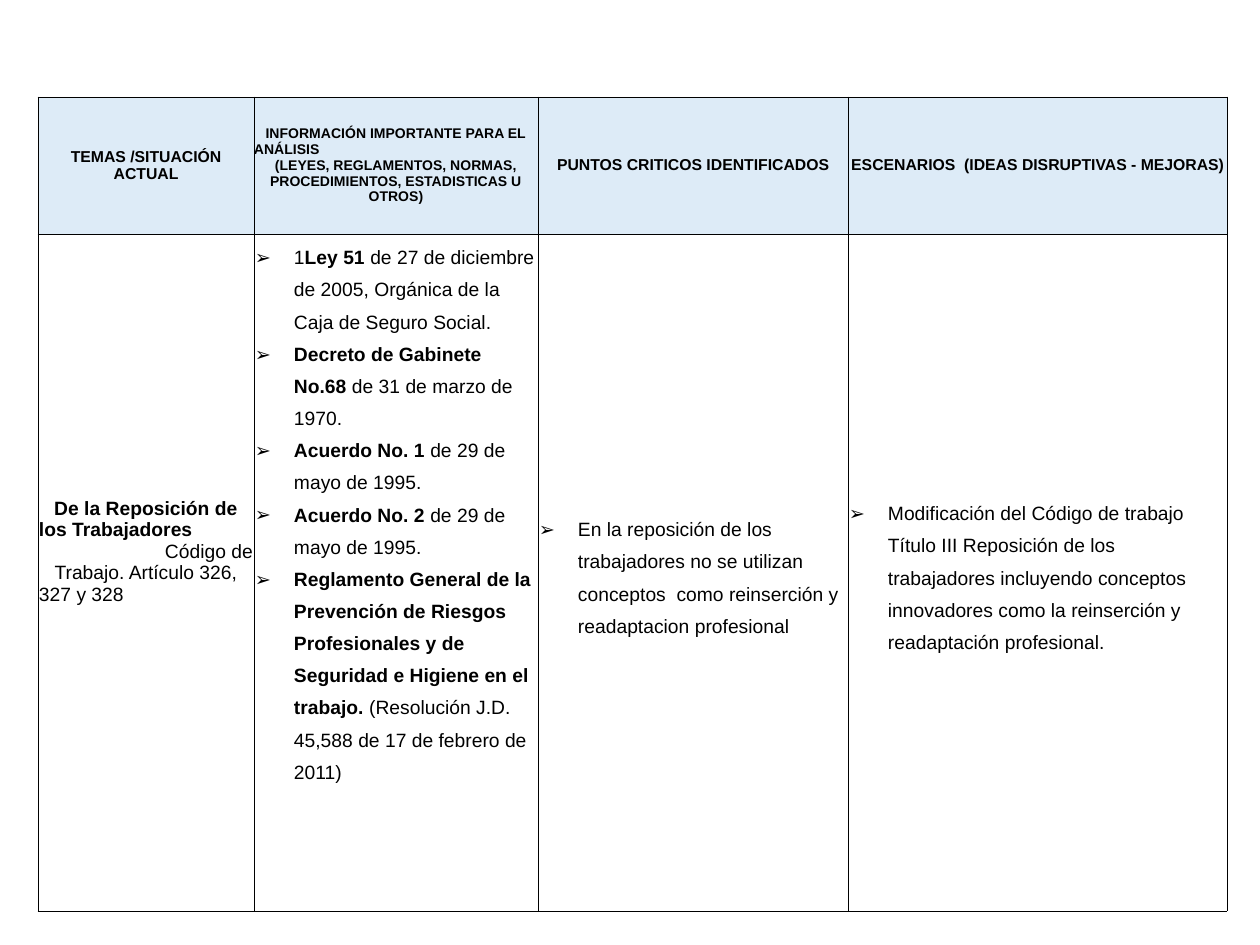
import pptx
import pptx.util
import pptx.dml.color
import pptx.enum.text
import pptx.oxml.ns
import lxml.etree

PX = 7257.14
COLORS = {"text": "000000", "border": "000000", "header": "DDEBF7"}
ALIGN = pptx.enum.text.PP_ALIGN
LEFT, CENTER, RIGHT = ALIGN.LEFT, ALIGN.CENTER, ALIGN.RIGHT


def px(length):
    return pptx.util.Emu(round(length * PX))


def add_xml(parent, tag, **attributes):
    return lxml.etree.SubElement(parent, pptx.oxml.ns.qn(tag), **attributes)


class SlideBuilder:
    font = "Arial"
    bullet = "➢"
    indent = 39

    def __init__(self, presentation):
        self.slide = presentation.slides.add_slide(presentation.slide_layouts[6])

    def table(self, left, top, widths, heights):
        shape = self.slide.shapes.add_table(
            len(heights), len(widths), px(left), px(top), px(sum(widths)), px(sum(heights)))
        table = shape.table
        table.horz_banding = False
        for column, width in zip(table.columns, widths):
            column.width = px(width)
        for row, height in zip(table.rows, heights):
            row.height = px(height)
        return table

    def borders(self, cell):
        properties = cell._tc.get_or_add_tcPr()
        for position, side in enumerate(("a:lnL", "a:lnR", "a:lnT", "a:lnB")):
            line = add_xml(properties, side, w=str(pptx.util.Pt(0.5)))
            fill = add_xml(line, "a:solidFill")
            add_xml(fill, "a:srgbClr", val=COLORS["border"])
            properties.insert(position, line)

    def cell(self, cell, paragraphs, size, fill=None, margin=0, bottom=0):
        cell.vertical_anchor = pptx.enum.text.MSO_ANCHOR.MIDDLE
        cell.margin_left = cell.margin_right = cell.margin_top = px(margin)
        cell.margin_bottom = px(bottom)
        if fill:
            cell.fill.solid()
            cell.fill.fore_color.rgb = pptx.dml.color.RGBColor.from_string(COLORS[fill])
        else:
            cell.fill.background()
        self.borders(cell)
        for index, (alignment, runs) in enumerate(paragraphs):
            frame = cell.text_frame
            paragraph = frame.paragraphs[0] if index == 0 else frame.add_paragraph()
            if alignment is None:
                self.bulleted(paragraph)
            else:
                paragraph.alignment = alignment
            for text, bold in runs:
                self.run(paragraph, text, size, bold)

    def bulleted(self, paragraph):
        paragraph.line_spacing = 1.5
        properties = paragraph._p.get_or_add_pPr()
        properties.set("marL", str(px(self.indent)))
        properties.set("indent", str(-px(self.indent)))
        add_xml(properties, "a:buFont", typeface=self.font)
        add_xml(properties, "a:buChar", char=self.bullet)

    def run(self, paragraph, text, size, bold):
        run = paragraph.add_run()
        run.text = text
        run.font.name = self.font
        run.font.size = pptx.util.Pt(size)
        run.font.bold = bold
        run.font.color.rgb = pptx.dml.color.RGBColor.from_string(COLORS["text"])


HEADERS = [
    (9, [(CENTER, "TEMAS /SITUACIÓN ACTUAL")]),
    (8, [(CENTER, "INFORMACIÓN IMPORTANTE PARA EL"),
         (LEFT, "ANÁLISIS"),
         (CENTER, "(LEYES, REGLAMENTOS, NORMAS, PROCEDIMIENTOS, ESTADISTICAS U OTROS)")]),
    (9, [(CENTER, "PUNTOS CRITICOS IDENTIFICADOS")]),
    (9, [(CENTER, "ESCENARIOS  (IDEAS DISRUPTIVAS - MEJORAS)")]),
]

TOPIC = [
    (CENTER, [("De la Reposición de", True)]),
    (LEFT, [("los Trabajadores", True)]),
    (RIGHT, [("Código de", False)]),
    (CENTER, [("Trabajo. Artículo 326,", False)]),
    (LEFT, [("327 y 328", False)]),
]
LAWS = [
    (None, [("1", False), ("Ley 51 ", True),
            ("de 27 de diciembre de 2005, Orgánica de la Caja de Seguro Social.", False)]),
    (None, [("Decreto de Gabinete No.68", True), (" de 31 de marzo de 1970.", False)]),
    (None, [("Acuerdo No. 1 ", True), ("de 29 de mayo de 1995.", False)]),
    (None, [("Acuerdo No. 2", True), (" de 29 de mayo de 1995.", False)]),
    (None, [("Reglamento General de la Prevención de Riesgos Profesionales y de "
             "Seguridad e Higiene en el trabajo. ", True),
            ("(Resolución J.D. 45,588 de 17 de febrero de 2011)", False)]),
]
CRITICAL_POINTS = [
    (None, [("En la reposición de los trabajadores no se utilizan conceptos  como "
             "reinserción y readaptacion profesional", False)]),
]
SCENARIOS = [
    (None, [("Modificación del Código de trabajo Título III Reposición de los trabajadores "
             "incluyendo conceptos innovadores como la reinserción y readaptación "
             "profesional.", False)]),
]
BODY = [(TOPIC, 43), (LAWS, 126), (CRITICAL_POINTS, 0), (SCENARIOS, 0)]


def main():
    presentation = pptx.Presentation()
    presentation.slide_width = px(1260)
    presentation.slide_height = px(945)
    builder = SlideBuilder(presentation)
    table = builder.table(38, 97, [216, 284, 310, 379], [137, 677])
    for column, (size, lines) in enumerate(HEADERS):
        paragraphs = [(alignment, [(text, True)]) for alignment, text in lines]
        builder.cell(table.cell(0, column), paragraphs, size, fill="header")
    for column, (paragraphs, bottom) in enumerate(BODY):
        builder.cell(table.cell(1, column), paragraphs, 11, margin=1, bottom=bottom)
    presentation.save("out.pptx")


if __name__ == "__main__":
    main()
